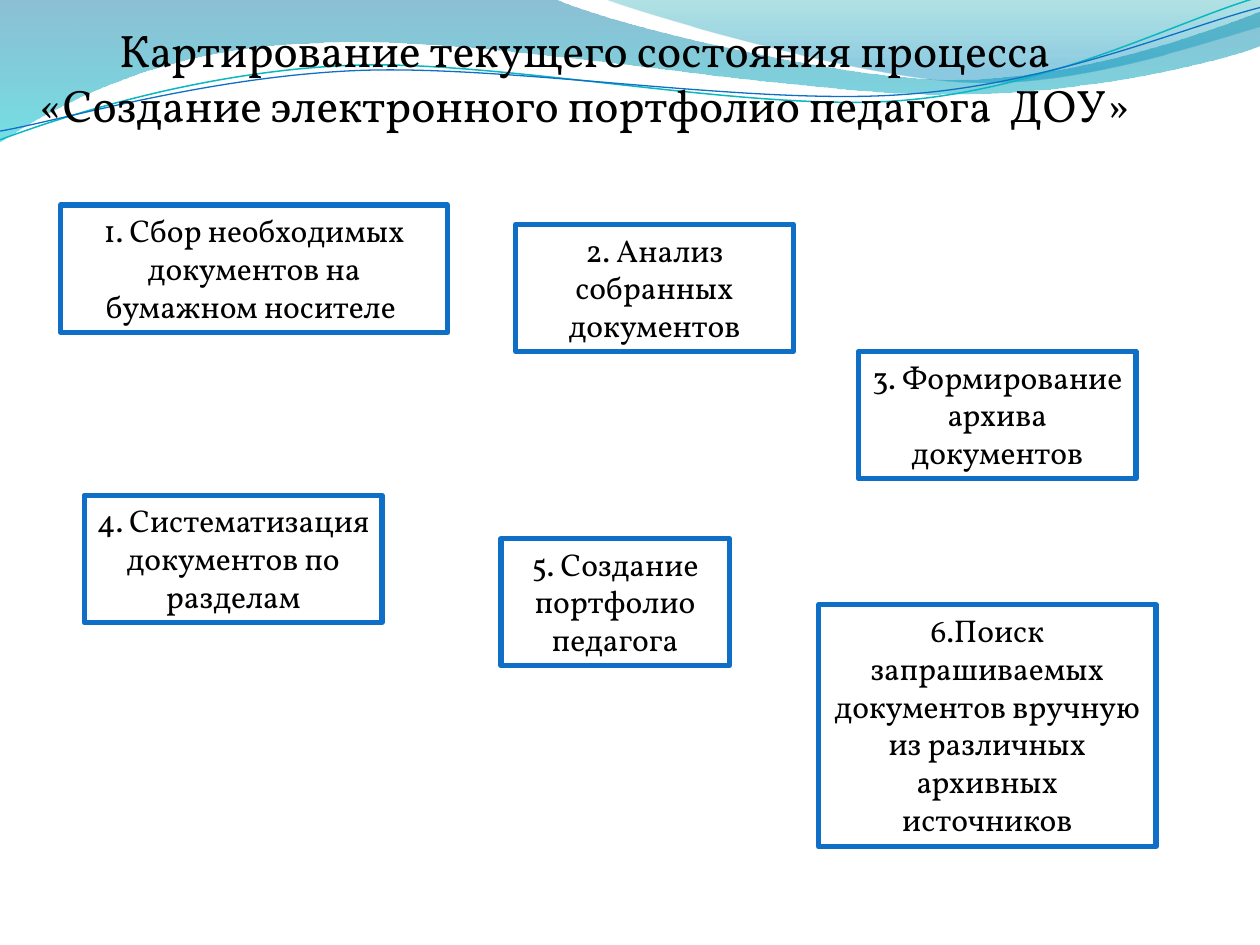
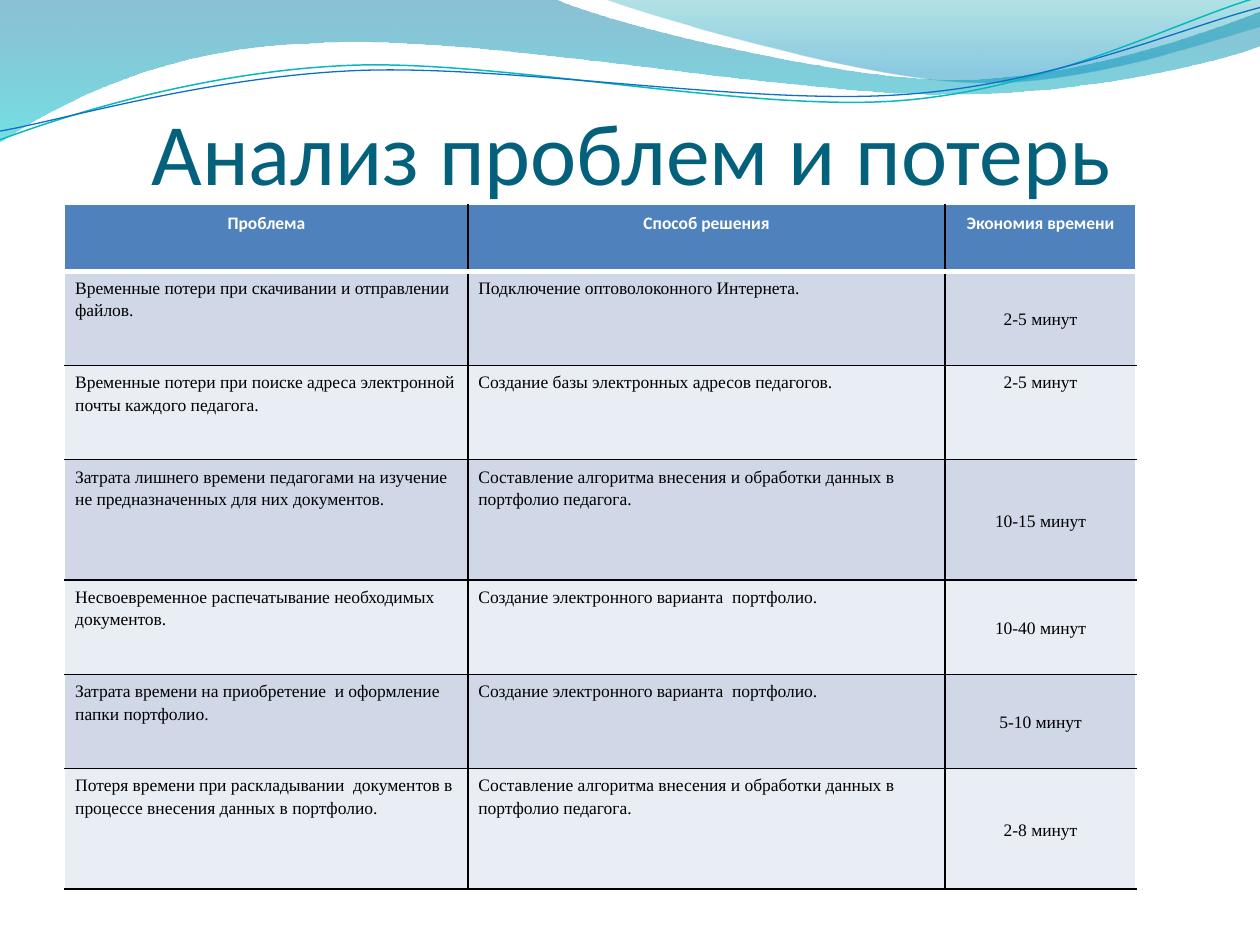
from lxml import etree
from pptx import Presentation
from pptx.dml.color import RGBColor
from pptx.enum import shapes, text
from pptx.oxml import ns
from pptx.util import Pt

# Shared colours and text formats
BLACK, WHITE, BLUE, TEAL, TITLE = "000000", "FFFFFF", "0F6FC6", "0AB8BF", "04617B"
HEADER, BANDS = "4F81BD", ("D0D8E8", "E9EDF4")
LEFT, CENTER = text.PP_ALIGN.LEFT, text.PP_ALIGN.CENTER
TOP, MIDDLE, BOTTOM = (text.MSO_ANCHOR.TOP, text.MSO_ANCHOR.MIDDLE,
                       text.MSO_ANCHOR.BOTTOM)

HEADLINE_FONT = {"name": "Vollkorn", "size": Pt(26), "bold": False}
STEP_FONT = {"name": "Vollkorn", "size": Pt(18), "bold": False}
TITLE_FONT = {"name": "Calibri", "size": Pt(50), "bold": False}
HEADER_FONT = {"name": "Calibri", "size": Pt(10), "bold": True}
CELL_FONT = {"name": "Times New Roman", "size": Pt(10), "bold": False}

# Waves: start point, then segments (2 numbers: a line, 6 numbers: a curve)
BANDS_OF_WAVE = [
    ((0, 0), [(316.8, -0.7), (342.7, 12.2, 478.1, 45.4, 545.8, 45.4),
              (614.2, 45.4, 689.8, 18.7, 720, 6.5), (720.7, 25.9),
              (707.8, 31.7, 626.4, 54.7, 537.1, 54),
              (447.8, 54, 275, 20.2, 185, 24.5),
              (92.9, 25.9, 33.1, 59.8, -0.7, 81.4), (0, 0)],
     [(0, "0074A1", 45), (1, "00C6CF", 55)]),
    ((344.9, -0.7), [(366.5, 7.9, 491, 44.6, 553.7, 46.8),
                     (616.3, 49.7, 691.9, 23, 720, 15.1), (720, 0), (344.9, -0.7)],
     [(0, "00A1A9", 30), (0.8, "008BBF", 45)]),
]
LINES_OF_WAVE = [
    ((0, 79.9), [(34.6, 67, 113.8, 41, 199.4, 37.4),
                 (284.4, 33.8, 427, 64.1, 513.4, 57.6),
                 (599.8, 51.1, 675.4, 10.8, 718.6, -1.4)], TEAL, 0.85),
    ((0, 74.9), [(33.8, 69.1, 118.1, 43.9, 203.8, 40.3),
                 (290.2, 36.7, 429.8, 60.5, 516.2, 54),
                 (601.9, 48.2, 677.5, 15.1, 720, 4.3)], BLUE, 0.75),
]

# Process steps: left, top, width, height, wording
STEPS = [
    (34.6, 117.2, 221.2, 72.7, "1. Сбор необходимых документов на бумажном носителе "),
    (294.7, 128.2, 158.6, 72.7, "2. Анализ собранных документов"),
    (490.6, 200.8, 158.6, 72.7, "3. Формирование архива документов"),
    (48.2, 283, 170.2, 72.7, "4. Систематизация документов по разделам"),
    (286.3, 307.7, 130.5, 72.7, "5. Создание портфолио педагога"),
    (467.8, 345.6, 192.8, 138.2, "6.Поиск запрашиваемых документов вручную "
                                 "из различных архивных источников"),
]

ALGORITHM = "Составление алгоритма внесения и обработки данных в портфолио педагога."
E_PORTFOLIO = "Создание электронного варианта  портфолио."
COL_WIDTHS = [230.4, 272.6, 109.2]
# Row height, cells, anchor of the last cell
LOSSES = [
    (38.2, ("Проблема", "Способ решения", "Экономия времени"), TOP),
    (53.8, ("Временные потери при скачивании и отправлении файлов.",
            "Подключение оптоволоконного Интернета.", "2-5 минут"), MIDDLE),
    (53.8, ("Временные потери при поиске адреса электронной почты каждого педагога.",
            "Создание базы электронных адресов педагогов.", "2-5 минут"), TOP),
    (69, ("Затрата лишнего времени педагогами на изучение  "
          "не предназначенных для них документов.", ALGORITHM, "10-15 минут"), MIDDLE),
    (53.8, ("Несвоевременное распечатывание необходимых документов.",
            E_PORTFOLIO, "10-40 минут"), MIDDLE),
    (53.8, ("Затрата времени на приобретение  и оформление папки портфолио.",
            E_PORTFOLIO, "5-10 минут"), MIDDLE),
    (69, ("Потеря времени при раскладывании  документов в процессе "
          "внесения данных в портфолио.", ALGORITHM, "2-8 минут"), MIDDLE),
]


def rgb(hex_color):
    return RGBColor.from_string(hex_color)


def set_attrs(obj, values):
    for name, value in values.items():
        setattr(obj, name, value)


def write(tf, wording, font, color, align=CENTER, spacing=None):
    p = tf.paragraphs[0]
    set_attrs(p, {"alignment": align, "line_spacing": spacing})
    r = p.add_run()
    r.text = wording
    set_attrs(r.font, font)
    r.font.color.rgb = rgb(color)


def place(sp, left, top, width, height):
    set_attrs(sp, {"left": Pt(left), "top": Pt(top),
                   "width": Pt(width), "height": Pt(height)})


# Waves shared through the slide master
def add_path(slide, start, segments, close):
    """Build an outline through all points, then bend its curved segments."""
    points = [(Pt(x), Pt(y)) for seg in segments for x, y in zip(seg[::2], seg[1::2])]
    builder = slide.shapes.build_freeform(Pt(start[0]), Pt(start[1]), scale=1.0)
    builder.add_line_segments(points, close=close)
    sp = builder.convert_to_shape()
    sp.shadow.inherit = False
    lines = iter(list(sp.element.spPr.iter(ns.qn("a:lnTo"))))
    for seg in segments:
        first = next(lines)
        if len(seg) == 6:
            first.tag = ns.qn("a:cubicBezTo")
            for _ in range(2):
                line = next(lines)
                first.append(line[0])
                line.getparent().remove(line)
    return sp


def add_wave_band(slide, start, segments, stops):
    sp = add_path(slide, start, segments, True)
    sp.line.fill.background()
    sp.fill.gradient()
    sp.fill.gradient_angle = 270
    for stop, (position, color, _) in zip(sp.fill.gradient_stops, stops):
        stop.position = position
        stop.color.rgb = rgb(color)
    for clr, (_, _, opacity) in zip(sp.element.spPr.iter(ns.qn("a:srgbClr")), stops):
        etree.SubElement(clr, ns.qn("a:alpha"), val=str(opacity * 1000))
    return sp


def add_wave_line(slide, start, segments, color, width):
    sp = add_path(slide, start, segments, False)
    sp.fill.background()
    sp.line.color.rgb = rgb(color)
    sp.line.width = Pt(width)
    return sp


def add_waves_to_master(slide):
    waves = [add_wave_band(slide, *band) for band in BANDS_OF_WAVE]
    waves += [add_wave_line(slide, *line) for line in LINES_OF_WAVE]
    for sp in waves:
        slide.slide_layout.slide_master.shapes.element.append(sp.element)


# Slide elements
def format_title(slide, box, wording, font, color, anchor, **margins):
    sp = slide.shapes.title
    place(sp, *box)
    tf = sp.text_frame
    set_attrs(tf, {"word_wrap": True, "auto_size": text.MSO_AUTO_SIZE.NONE,
                   "vertical_anchor": anchor, **margins})
    write(tf, wording, font, color)


def add_step(slide, left, top, width, height, wording):
    sp = slide.shapes.add_shape(shapes.MSO_SHAPE.RECTANGLE, Pt(left), Pt(top),
                                Pt(width), Pt(height))
    sp.shadow.inherit = False
    sp.fill.background()
    sp.line.color.rgb = rgb(BLUE)
    sp.line.width = Pt(3)
    tf = sp.text_frame
    set_attrs(tf, {"word_wrap": True, "vertical_anchor": TOP,
                   "auto_size": text.MSO_AUTO_SIZE.SHAPE_TO_FIT_TEXT})
    write(tf, wording, STEP_FONT, BLACK)


def set_borders(cell, **sides):
    tc_pr = cell._tc.get_or_add_tcPr()
    for side in "LRTB":
        color, width = sides[side]
        ln = etree.SubElement(tc_pr, ns.qn("a:ln" + side), w=str(Pt(width)))
        fill = etree.SubElement(ln, ns.qn("a:solidFill"))
        etree.SubElement(fill, ns.qn("a:srgbClr"), val=color)


def format_cell(cell, row, col, wording, anchor):
    header, last_col = row == 0, col == len(COL_WIDTHS) - 1
    thin, outer, heavy = (BLACK, 1), (WHITE, 1), (WHITE, 3)
    set_borders(cell, L=outer if col == 0 else thin,
                R=outer if last_col else thin,
                T={0: outer, 1: heavy}.get(row, thin),
                B=heavy if header else thin)
    cell.fill.solid()
    cell.fill.fore_color.rgb = rgb(HEADER if header else BANDS[(row - 1) % 2])
    set_attrs(cell, {"margin_left": Pt(6), "margin_right": Pt(6),
                     "margin_top": Pt(3), "margin_bottom": Pt(3),
                     "vertical_anchor": anchor if last_col else TOP})
    write(cell.text_frame, wording, HEADER_FONT if header else CELL_FONT,
          WHITE if header else BLACK,
          CENTER if header or last_col else LEFT, 1.15)


def add_losses_table(slide, left, top):
    frame = slide.shapes.add_table(len(LOSSES), len(COL_WIDTHS), Pt(left), Pt(top),
                                   Pt(sum(COL_WIDTHS)), Pt(sum(r[0] for r in LOSSES)))
    table = frame.table
    for column, width in zip(table.columns, COL_WIDTHS):
        column.width = Pt(width)
    for row, (height, cells, anchor) in enumerate(LOSSES):
        table.rows[row].height = Pt(height)
        for col, wording in enumerate(cells):
            format_cell(table.cell(row, col), row, col, wording, anchor)


def main():
    prs = Presentation()
    prs.slide_width, prs.slide_height = Pt(720), Pt(540)
    layout = prs.slide_layouts[5]

    # Process map
    s = prs.slides.add_slide(layout)
    add_waves_to_master(s)
    format_title(s, (14.1, 9.1, 640.8, 108),
                 "Картирование текущего состояния процесса "
                 "«Создание электронного портфолио педагога  ДОУ»",
                 HEADLINE_FONT, BLACK, TOP)
    for step in STEPS:
        add_step(s, *step)

    # Problems and losses
    s = prs.slides.add_slide(layout)
    format_title(s, (42.5, 25.9, 648, 90), "Анализ проблем и потерь ",
                 TITLE_FONT, TITLE, BOTTOM,
                 margin_left=0, margin_right=0, margin_bottom=0)
    add_losses_table(s, 37, 116.8)

    prs.save("out.pptx")


if __name__ == "__main__":
    main()
